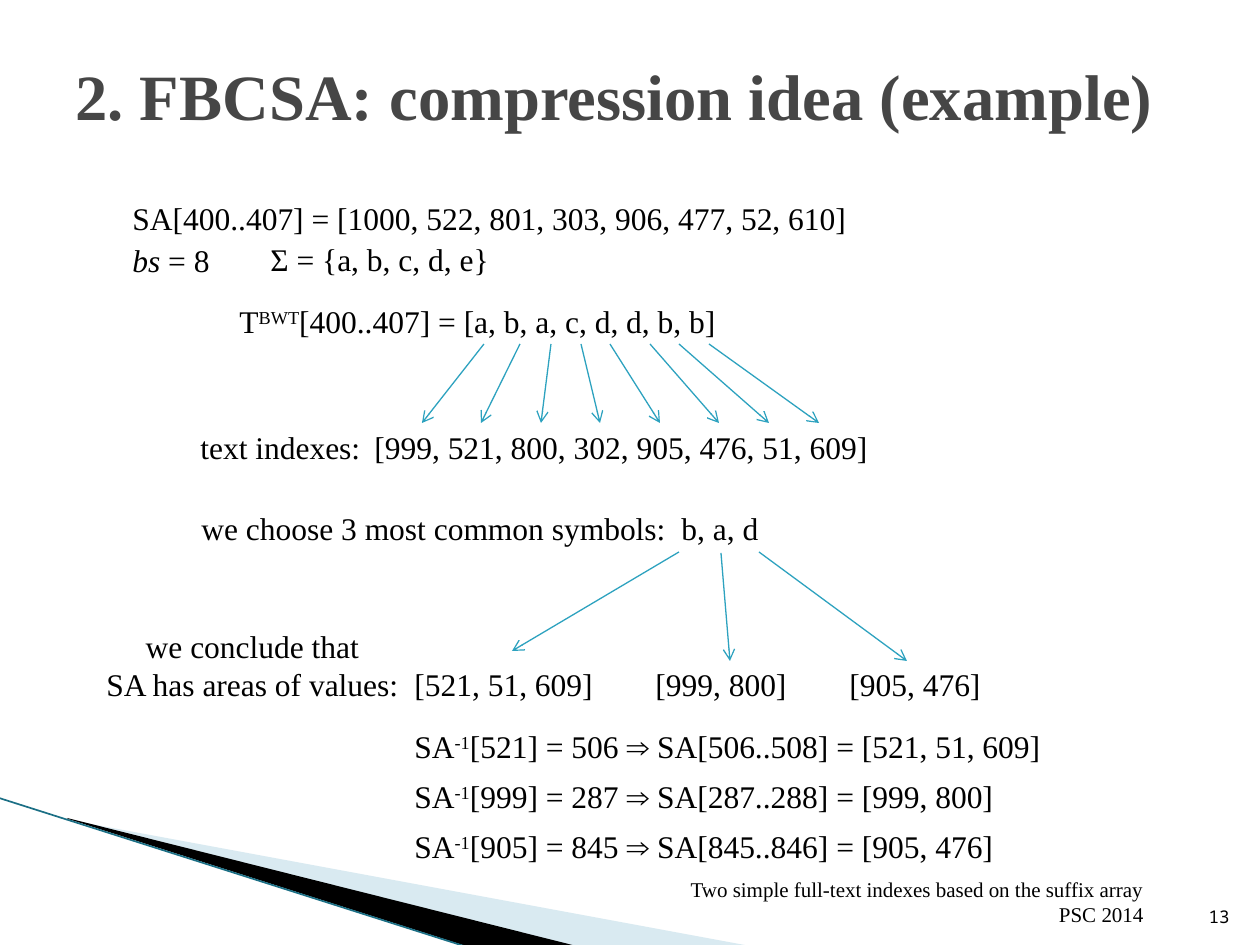
from lxml import etree
from pptx import Presentation
from pptx.dml.color import RGBColor
from pptx.enum.shapes import MSO_CONNECTOR
from pptx.enum.text import MSO_ANCHOR, MSO_AUTO_SIZE, PP_ALIGN
from pptx.oxml.ns import qn
from pptx.util import Emu, Pt

PX = 914400 / 126
SERIF, MONO = "Times New Roman", "Noto Sans Mono"
BLACK, TITLE_GREY, ARROW_BLUE = "000000", "464646", "2DA2BF"
PALE_BLUE, EDGE_TEAL = "A0CBDC", "1B6F85"
LEFT, CENTER, RIGHT = PP_ALIGN.LEFT, PP_ALIGN.CENTER, PP_ALIGN.RIGHT
TOP, MIDDLE, BOTTOM = MSO_ANCHOR.TOP, MSO_ANCHOR.MIDDLE, MSO_ANCHOR.BOTTOM
STRAIGHT = MSO_CONNECTOR.STRAIGHT
FIT, FIXED = MSO_AUTO_SIZE.SHAPE_TO_FIT_TEXT, MSO_AUTO_SIZE.NONE
LINE_HEIGHT = 50


def px(value):
    return Emu(round(value * PX))


def color(hex_string):
    return RGBColor.from_string(hex_string)


def add_text(slide, box, paragraphs, size=18, font=SERIF, fill=BLACK, bold=False,
             align=LEFT, anchor=TOP, wrap=False, fit=FIT):
    """Each paragraph is a list of (text, style); style is "", "italic" or "super"."""
    shape = slide.shapes.add_textbox(*map(px, box))
    frame = shape.text_frame
    frame.word_wrap, frame.auto_size, frame.vertical_anchor = wrap, fit, anchor
    for index, pieces in enumerate(paragraphs):
        paragraph = frame.paragraphs[0] if index == 0 else frame.add_paragraph()
        paragraph.alignment = align
        for text, style in pieces:
            run = paragraph.add_run()
            run.text = text
            run.font.size, run.font.name, run.font.bold = Pt(size), font, bold
            run.font.color.rgb = color(fill)
            if style == "italic":
                run.font.italic = True
            elif style == "super":
                run.font._element.set("baseline", "30000")


def add_label(slide, left, top, width, *pieces, wrap=False):
    add_text(slide, (left, top, width, LINE_HEIGHT), [pieces], wrap=wrap)


def add_line(slide, start, end, line_color, width, arrow=False):
    connector = slide.shapes.add_connector(STRAIGHT, *map(px, (*start, *end)))
    connector.line.color.rgb = color(line_color)
    connector.line.width = Pt(width)
    properties = connector._element.spPr
    if arrow:
        etree.SubElement(properties.find(qn("a:ln")), qn("a:tailEnd"), type="arrow")
    etree.SubElement(properties, qn("a:effectLst"))


def add_arrows(slide, left, top, arrows):
    for x1, y1, x2, y2 in arrows:
        add_line(slide, (left + x1, top + y1), (left + x2, top + y2),
                 ARROW_BLUE, 0.75, arrow=True)


def add_wedge(slide, points, fill, alpha=None):
    builder = slide.shapes.build_freeform(*points[0], scale=PX)
    builder.add_line_segments(points[1:], close=True)
    shape = builder.convert_to_shape()
    shape.shadow.inherit = False
    shape.fill.solid()
    shape.fill.fore_color.rgb = color(fill)
    shape.line.fill.background()
    if alpha:
        fill_color = shape._element.spPr.find(qn("a:solidFill"))[0]
        etree.SubElement(fill_color, qn("a:alpha"), val=str(alpha * 1000))


def add_corner(slide, left, top):
    """Wedges rising from the bottom left corner."""
    def place(points):
        return [(left + x, top + y) for x, y in points]

    add_wedge(slide, place([(69, 22), (750, 148), (575, 148), (69, 21)]), PALE_BLUE, 40)
    add_wedge(slide, place([(67, 20), (576, 148), (469, 149), (68, 21)]), BLACK)
    add_line(slide, *place([(-1, 0), (467, 149)]), EDGE_TEAL, 0.95)


def add_input(slide, left, top):
    """Suffix array, block size, alphabet and BWT symbols."""
    add_label(slide, left, top, 747,
              ("SA[400..407] = [1000, 522, 801, 303, 906, 477, 52, 610]", ""))
    add_label(slide, left, top + 42, 103, ("bs", "italic"), (" = 8", ""))
    add_label(slide, left + 138, top + 41, 246, ("Σ = {a, b, c, d, e}", ""))
    add_label(slide, left + 107, top + 103, 513, ("T", ""), ("BWT", "super"),
              ("[400..407] = [a, b, a, c, d, d, b, b]", ""))


def add_indexes(slide, left, top):
    """Arrows from each symbol to its text index."""
    starts = (484, 520, 551, 581, 610, 650, 679, 709)
    ends = (422, 481, 541, 600, 660, 719, 769, 819)
    add_arrows(slide, 0, top, [(start, 0, end, 79) for start, end in zip(starts, ends)])
    add_label(slide, left, top + 78, 188, ("text indexes:", ""))
    add_label(slide, left + 174, top + 78, 524,
              ("[999, 521, 800, 302, 905, 476, 51, 609]", ""))


def add_symbols(slide, left, top):
    """Most common symbols and the value areas they lead to."""
    add_label(slide, left, top, 495, ("we choose 3 most common symbols:", ""))
    add_label(slide, left + 480, top, 103, ("b, a, d", ""))
    add_arrows(slide, left, top, [(490, 49, 323, 148), (532, 50, 541, 158),
                                  (570, 49, 718, 158)])
    add_text(slide, (left - 125, top + 118, 377, 89),
             [[("we conclude that", "")], [("SA has areas of values:", "")]],
             align=CENTER, wrap=True)
    for offset, width, values in ((213, 230, "[521, 51, 609]"),
                                  (454, 180, "[999, 800]"),
                                  (648, 180, "[905, 476]")):
        add_label(slide, left + offset, top + 156, width, (values, ""), wrap=True)


def add_results(slide, left, top):
    """Inverse suffix array look-ups, one per row."""
    rows = ("[521] = 506 ⇒ SA[506..508] = [521, 51, 609]",
            "[999] = 287 ⇒ SA[287..288] = [999, 800]",
            "[905] = 845 ⇒ SA[845..846] = [905, 476]")
    for index, row in enumerate(rows):
        add_label(slide, left, top + index * LINE_HEIGHT, 694,
                  ("SA", ""), ("-1", "super"), (row, ""), wrap=True)


def add_footer(slide, left, top):
    style = {"align": RIGHT, "anchor": BOTTOM, "wrap": True, "fit": FIXED}
    add_text(slide, (left, top, 552, LINE_HEIGHT),
             [[("Two simple full-text indexes based on the suffix array", "")],
              [("PSC 2014", "")]], size=12, **style)
    add_text(slide, (left + 588, top, 50, LINE_HEIGHT), [[("13", "")]],
             size=10, font=MONO, **style)


def main():
    presentation = Presentation()
    presentation.slide_width, presentation.slide_height = px(1260), px(945)
    slide = presentation.slides.add_slide(presentation.slide_layouts[6])
    add_corner(slide, 0, 798)
    add_text(slide, (63, 16, 1134, 158), [[("2. FBCSA: compression idea (example)", "")]],
             size=36.9, fill=TITLE_GREY, bold=True, anchor=MIDDLE, wrap=True, fit=FIXED)
    add_input(slide, 120, 193)
    add_indexes(slide, 188, 344)
    add_symbols(slide, 189, 503)
    add_results(slide, 402, 721)
    add_footer(slide, 604, 883)
    presentation.save("out.pptx")


if __name__ == "__main__":
    main()
